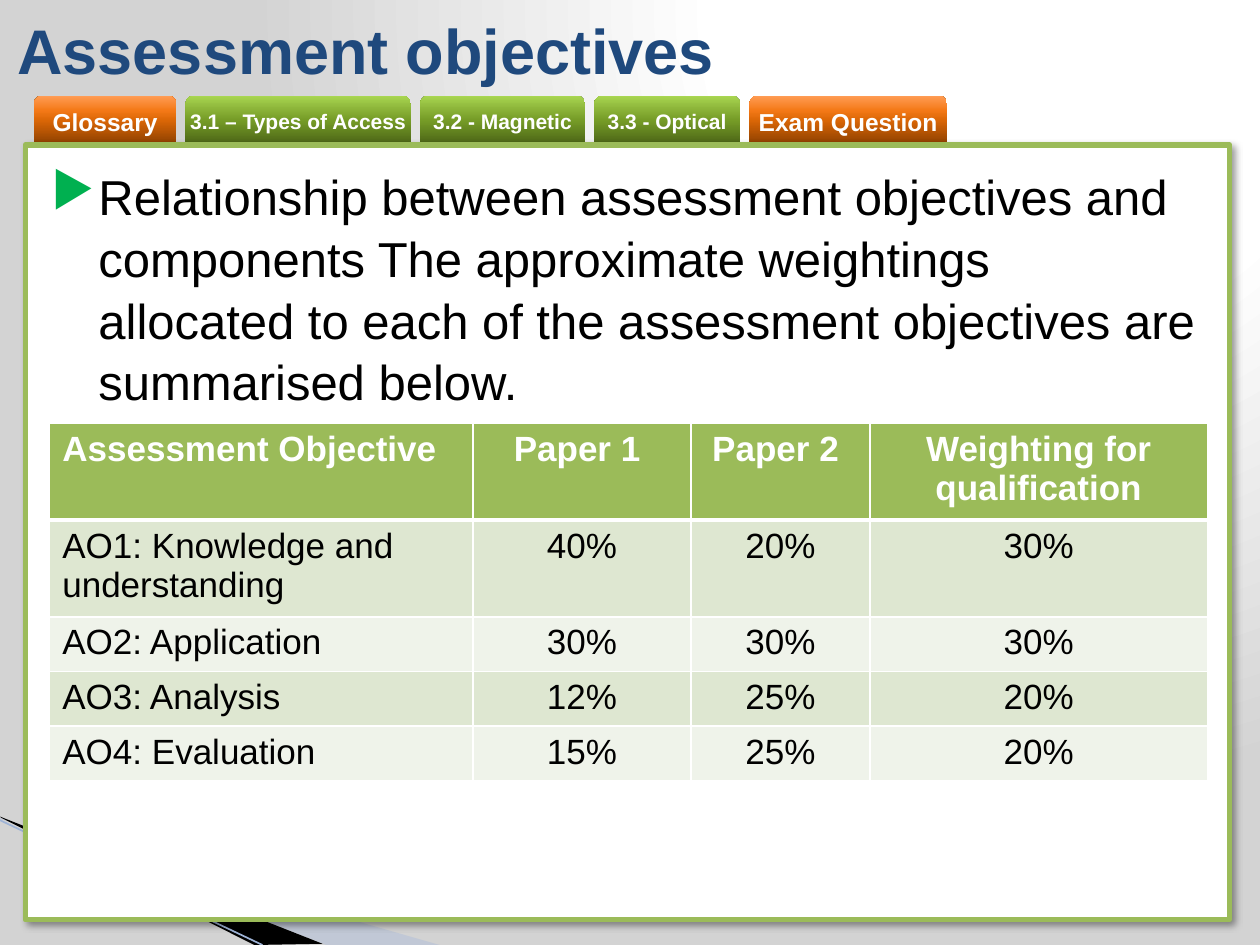
from dataclasses import dataclass

from pptx import Presentation
from pptx.dml.color import RGBColor
from pptx.enum.shapes import MSO_CONNECTOR, MSO_SHAPE
from pptx.enum.text import MSO_ANCHOR, PP_ALIGN
from pptx.oxml import parse_xml
from pptx.oxml.ns import nsdecls, qn
from pptx.util import Pt


@dataclass(frozen=True)
class Theme:
    font: str = "Arial"
    white: str = "FFFFFF"
    black: str = "000000"
    navy: str = "1F497D"
    green: str = "9BBB59"
    bullet: str = "00B050"
    bands: tuple = ("DEE7D1", "EFF3EA")
    swoosh: str = "A7B9DB"
    swoosh_line: str = "9EB3D6"
    backdrop: tuple = ((0, "FFFFFF"), (40, "FFFFFF"), (100, "D3D3D3"))
    green_tab: tuple = ((0, "4A6316"), (50, "769C27"), (70, "89B137"), (100, "A9D651"))
    orange_tab: tuple = ((0, "8B3F00"), (50, "DA6606"), (70, "F47917"), (100, "FF9C54"))
    title_size: int = 36
    body_size: int = 28
    table_size: int = 20
    large_tab_size: int = 14
    small_tab_size: int = 12


THEME = Theme()

# Text, width and whether the tab is a main (orange) one
TABS = [
    ("Glossary", 81.4, True),
    ("3.1 – Types of Access", 128.8, False),
    ("3.2 - Magnetic", 94.3, False),
    ("3.3 - Optical", 83.5, False),
    ("Exam Question", 113, True),
]

BODY = ("Relationship between assessment objectives and components "
        "The approximate weightings allocated to each of the assessment "
        "objectives are summarised below.")

WEIGHTINGS = [
    ("Assessment Objective", "Paper 1 ", "Paper 2 ", "Weighting for qualification"),
    ("AO1: Knowledge and understanding", "40%", "20%", "30%"),
    ("AO2: Application", "30%", "30%", "30%"),
    ("AO3: Analysis", "12%", "25%", "20%"),
    ("AO4: Evaluation", "15%", "25%", "20%"),
]


def rgb(color):
    return RGBColor.from_string(color)


def element(xml):
    """Parse a drawing element, declaring its namespace."""
    tag, rest = xml[1:].split(" ", 1)
    return parse_xml(f"<{tag} {nsdecls('a')} {rest}")


def add_run(paragraph, text, size, color, bold=False):
    run = paragraph.add_run()
    run.text = text
    run.font.name = THEME.font
    run.font.size = Pt(size)
    run.font.bold = bold
    run.font.color.rgb = rgb(color)


def set_gradient(fill, owner, stops, direction):
    """Give a fill several stops; owner is the element that holds it."""
    fill.gradient()
    gradient = owner.find(".//" + qn("a:gradFill"))
    for child in list(gradient):
        gradient.remove(child)
    stop_xml = "".join(
        f'<a:gs pos="{position * 1000}"><a:srgbClr val="{color}"/></a:gs>'
        for position, color in stops)
    gradient.append(element(f"<a:gsLst >{stop_xml}</a:gsLst>"))
    gradient.append(element(direction))


def add_text_box(slide, left, top, width, height):
    frame = slide.shapes.add_textbox(Pt(left), Pt(top), Pt(width), Pt(height)).text_frame
    frame.word_wrap = True
    return frame


def add_polygon(slide, points, color, opacity=100):
    corners = [(Pt(x), Pt(y)) for x, y in points]
    builder = slide.shapes.build_freeform(*corners[0])
    builder.add_line_segments(corners[1:], close=True)
    shape = builder.convert_to_shape()
    shape.shadow.inherit = False
    shape.line.fill.background()
    shape.fill.solid()
    shape.fill.fore_color.rgb = rgb(color)
    if opacity < 100:
        shape._element.spPr.find(".//" + qn("a:srgbClr")).append(
            element(f'<a:alpha val="{opacity * 1000}"/>'))


def add_swoosh(slide):
    add_polygon(slide, [(0, 468), (251.3, 540), (186.5, 540), (0, 467.3)], THEME.swoosh, 40)
    add_polygon(slide, [(0, 466.6), (184.3, 539.3), (145.4, 540), (0.7, 467.3)], THEME.black)
    connector = slide.shapes.add_connector(
        MSO_CONNECTOR.STRAIGHT, Pt(0), Pt(468.7), Pt(150), Pt(540))
    connector.line.color.rgb = rgb(THEME.swoosh_line)
    connector.line.width = Pt(0.95)
    connector._element.spPr.append(element("<a:effectLst />"))


def add_tab(slide, left, width, text, is_main):
    shape = slide.shapes.add_shape(
        MSO_SHAPE.ROUND_2_SAME_RECTANGLE, Pt(left), Pt(54.7), Pt(width), Pt(28.1))
    shape.shadow.inherit = False
    shape.line.fill.background()
    stops = THEME.orange_tab if is_main else THEME.green_tab
    set_gradient(shape.fill, shape._element, stops, '<a:lin ang="16200000" scaled="0"/>')
    frame = shape.text_frame
    frame.margin_left = frame.margin_right = frame.margin_top = frame.margin_bottom = 0
    frame.vertical_anchor = MSO_ANCHOR.MIDDLE
    frame.word_wrap = True
    paragraph = frame.paragraphs[0]
    paragraph.alignment = PP_ALIGN.CENTER
    size = THEME.large_tab_size if is_main else THEME.small_tab_size
    add_run(paragraph, text, size, THEME.white, bold=True)


def add_panel(slide):
    panel = slide.shapes.add_shape(
        MSO_SHAPE.RECTANGLE, Pt(14.4), Pt(82.8), Pt(688.3), Pt(442.8))
    panel.fill.solid()
    panel.fill.fore_color.rgb = rgb(THEME.white)
    panel.line.color.rgb = rgb(THEME.green)
    panel.line.width = Pt(3)
    panel._element.spPr.append(element(
        f'<a:effectLst ><a:outerShdw blurRad="{Pt(4)}" dist="{Pt(3)}" dir="2700000" '
        f'algn="tl" rotWithShape="0"><a:srgbClr val="{THEME.black}">'
        '<a:alpha val="40000"/></a:srgbClr></a:outerShdw></a:effectLst>'))


def add_title(slide, text):
    frame = add_text_box(slide, 2.9, 2.2, 581, 52.5)
    frame.vertical_anchor = MSO_ANCHOR.MIDDLE
    add_run(frame.paragraphs[0], text, THEME.title_size, THEME.navy, bold=True)


def add_bullet_text(slide, text):
    paragraph = add_text_box(slide, 22.3, 90, 669.6, 143.3).paragraphs[0]
    paragraph.line_spacing = 1.05
    properties = paragraph._p.get_or_add_pPr()
    properties.set("marL", str(Pt(26.9)))
    properties.set("indent", str(-Pt(26.9)))
    properties.append(element(f'<a:buClr ><a:srgbClr val="{THEME.bullet}"/></a:buClr>'))
    properties.append(element('<a:buChar char="▶"/>'))
    add_run(paragraph, text, THEME.body_size, THEME.black)


def style_cell(cell, fill, bottom_width):
    for side, width in (("L", 1), ("R", 1), ("T", 1), ("B", bottom_width)):
        cell._tc.get_or_add_tcPr().append(element(
            f'<a:ln{side} w="{Pt(width)}"><a:solidFill><a:srgbClr val="{THEME.white}"/>'
            f"</a:solidFill></a:ln{side}>"))
    cell.fill.solid()
    cell.fill.fore_color.rgb = rgb(fill)


def add_weighting_table(slide, rows):
    widths = (241.9, 124.6, 102.2, 193)
    table = slide.shapes.add_table(
        len(rows), len(widths), Pt(28.4), Pt(242), Pt(sum(widths)), Pt(108)).table
    for column, width in zip(table.columns, widths):
        column.width = Pt(width)
    for row_index, row in enumerate(rows):
        is_header = row_index == 0
        fill = THEME.green if is_header else THEME.bands[(row_index - 1) % 2]
        color = THEME.white if is_header else THEME.black
        for column_index, text in enumerate(row):
            cell = table.cell(row_index, column_index)
            style_cell(cell, fill, 3 if is_header else 1)
            paragraph = cell.text_frame.paragraphs[0]
            paragraph.alignment = PP_ALIGN.CENTER if column_index else PP_ALIGN.LEFT
            add_run(paragraph, text, THEME.table_size, color, bold=is_header)


def main():
    presentation = Presentation()
    presentation.slide_width, presentation.slide_height = Pt(720), Pt(540)
    slide = presentation.slides.add_slide(presentation.slide_layouts[6])

    # Backdrop
    set_gradient(slide.background.fill, slide._element, THEME.backdrop,
                 '<a:path path="circle"><a:fillToRect l="65000" b="98000"/></a:path>')
    add_swoosh(slide)

    # Navigation tabs, side by side
    left, gap = 19.4, 5.2
    for text, width, is_main in TABS:
        add_tab(slide, left, width, text, is_main)
        left += width + gap

    # Content
    add_panel(slide)
    add_title(slide, "Assessment objectives")
    add_weighting_table(slide, WEIGHTINGS)
    add_bullet_text(slide, BODY)

    presentation.save("out.pptx")


if __name__ == "__main__":
    main()
